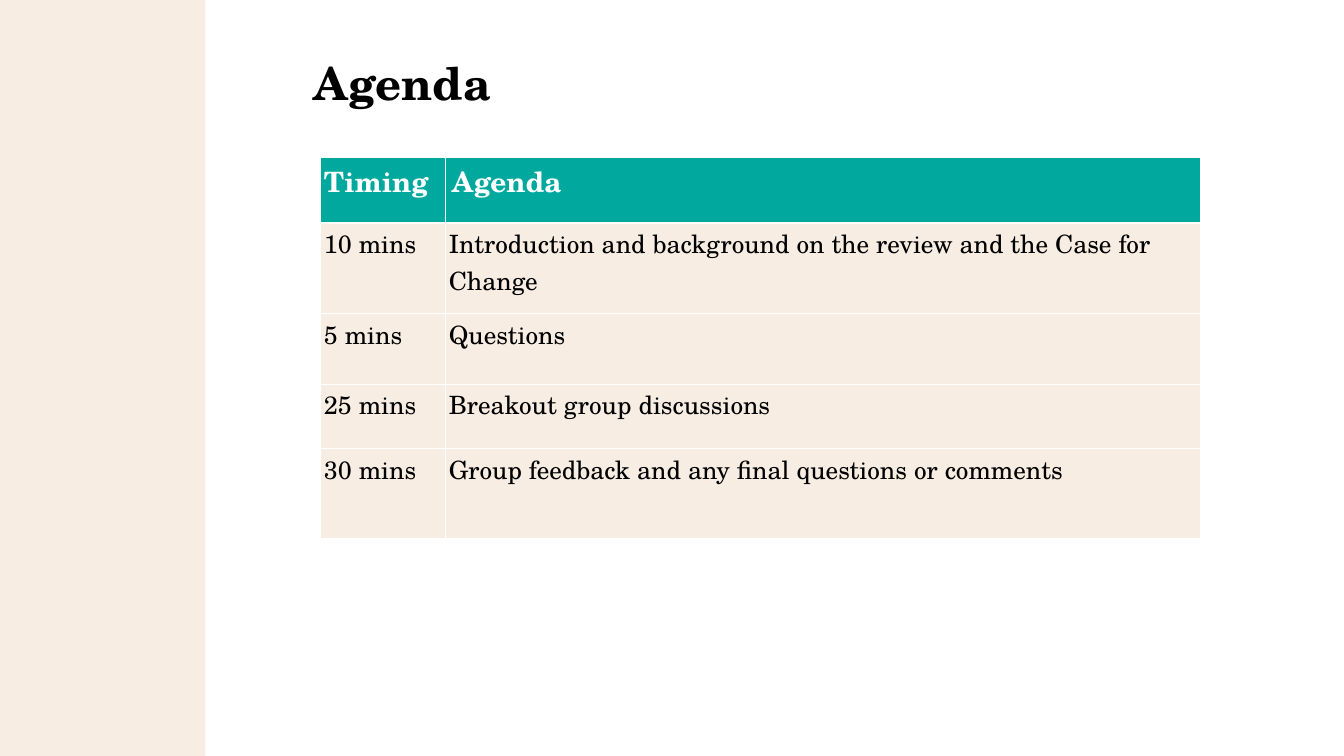
from lxml import etree
from pptx import Presentation
from pptx import util as u
from pptx.dml.color import RGBColor
from pptx.enum import shapes, text
from pptx.oxml import ns

FONT = "TeX Gyre Schola"
SAND, TEAL, WHITE, BLACK = "F7EDE3", "00A89E", "FFFFFF", "000000"
ROWS = [
    ("Timing", "Agenda"),
    ("10 mins", "Introduction and background on the review and the Case for Change"),
    ("5 mins", "Questions"),
    ("25 mins", "Breakout group discussions"),
    ("30 mins", "Group feedback and any final questions or comments"),
]
WIDTHS = (3.15, 19.02)
HEIGHTS = (1.65, 2.29, 1.78, 1.63, 2.26)


def paint(target, color):
    """Give a fill a solid colour."""
    target.solid()
    target.fore_color.rgb = RGBColor.from_string(color)


def write(para, words, size, color=BLACK, bold=False, face=FONT):
    """Add one formatted run to a paragraph."""
    run = para.add_run()
    run.text = words
    run.font.name, run.font.size, run.font.bold = face, u.Pt(size), bold
    paint(run.font.fill, color)


def edge(cell, side, width):
    """Draw a white border on one side of a cell."""
    line = etree.Element(ns.qn(f"a:ln{side}"), w=str(u.Pt(width)))
    fill = etree.SubElement(line, ns.qn("a:solidFill"))
    etree.SubElement(fill, ns.qn("a:srgbClr"), val=WHITE)
    cell._tc.get_or_add_tcPr().append(line)


def add_band(slide, left, top, width, height):
    """Place the coloured band at the side."""
    band = slide.shapes.add_shape(
        shapes.MSO_SHAPE.RECTANGLE, u.Cm(left), u.Cm(top), u.Cm(width), u.Cm(height))
    band.shadow.inherit = False
    paint(band.fill, SAND)
    band.line.fill.background()


def add_title(slide, left, top, width, height):
    """Place and write the title."""
    title = slide.shapes.title
    title.left, title.top = u.Cm(left), u.Cm(top)
    title.width, title.height = u.Cm(width), u.Cm(height)
    frame = title.text_frame
    frame.auto_size = text.MSO_AUTO_SIZE.NONE
    frame.vertical_anchor = text.MSO_ANCHOR.MIDDLE
    para = frame.paragraphs[0]
    para.alignment = text.PP_ALIGN.LEFT
    para.line_spacing = 0.9
    write(para, "Agenda", 32.4, bold=True)


def fill_cell(cell, words, row, col):
    """Write, border and colour one cell of the agenda."""
    head = row == 0
    cell.margin_left = cell.margin_right = u.Cm(0.08)
    cell.margin_top = cell.margin_bottom = u.Cm(0.05)
    para = cell.text_frame.paragraphs[0]
    if head and col == 1:
        write(para, " ", 8, face="Arial")
    write(para, words, 20 if head else 18, WHITE if head else BLACK, head)
    for side in "LRTB":
        thick = (row, side) in ((0, "B"), (1, "T"))
        edge(cell, side, 1.5 if thick else 0.75)
    paint(cell.fill, TEAL if head else SAND)


def add_agenda(slide, left, top):
    """Place the timing table."""
    table = slide.shapes.add_table(
        len(ROWS), len(WIDTHS), u.Cm(left), u.Cm(top),
        u.Cm(sum(WIDTHS)), u.Cm(sum(HEIGHTS))).table
    for col, width in zip(table.columns, WIDTHS):
        col.width = u.Cm(width)
    for r, (row, height) in enumerate(zip(table.rows, HEIGHTS)):
        row.height = u.Cm(height)
        for c, words in enumerate(ROWS[r]):
            fill_cell(table.cell(r, c), words, r, c)


def main():
    """Build the agenda slide."""
    deck = Presentation()
    deck.slide_width, deck.slide_height = u.Cm(33.87), u.Cm(19.05)
    slide = deck.slides.add_slide(deck.slide_layouts[5])
    paint(slide.background.fill, WHITE)
    add_band(slide, 0, -0.69, 5.18, 19.76)
    add_title(slide, 7.65, 1.57, 23.9, 1.19)
    add_agenda(slide, 8.08, 3.96)
    deck.save("out.pptx")


if __name__ == "__main__":
    main()
